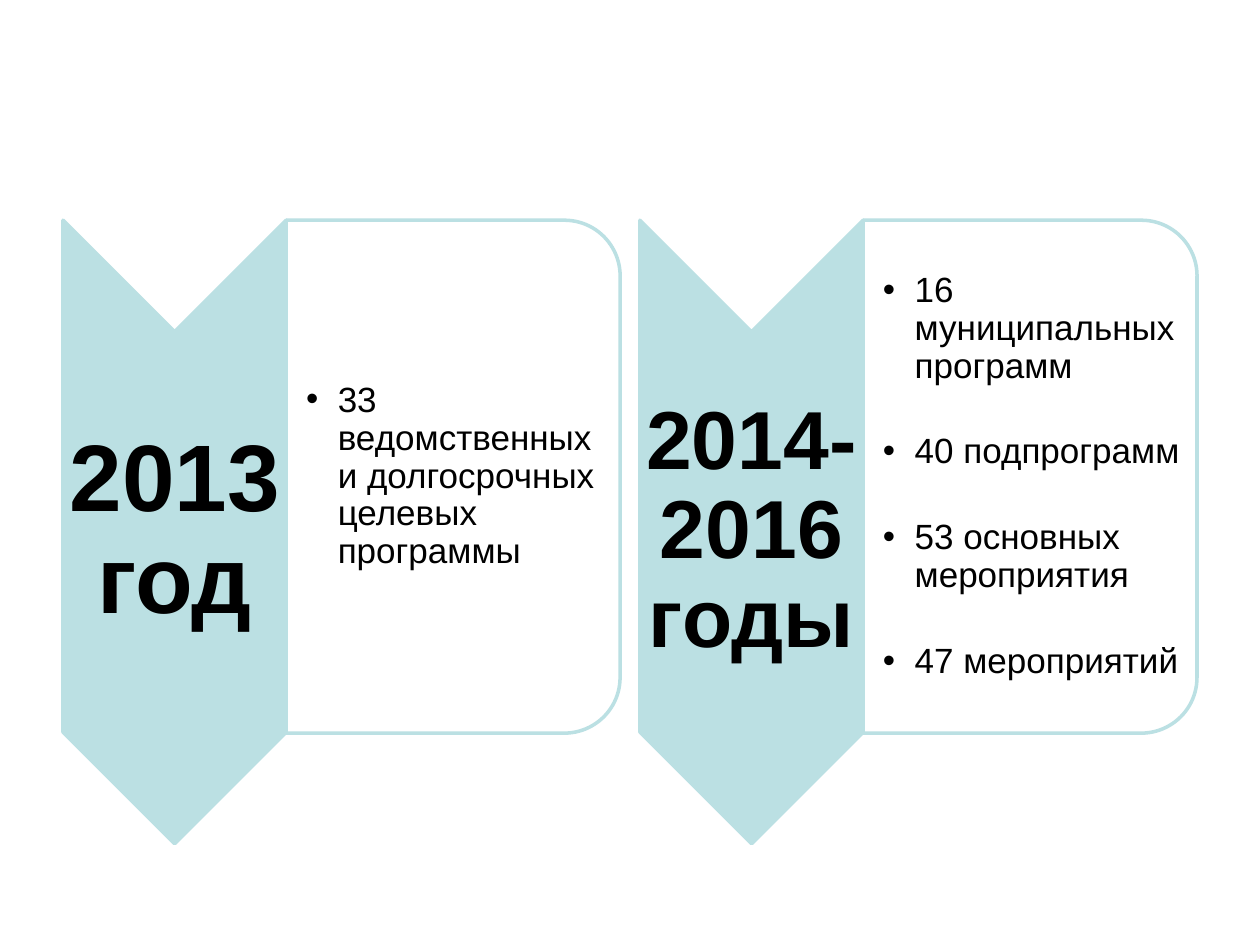
import pptx
import pptx.dml.color
import pptx.enum.shapes
import pptx.enum.text
import pptx.oxml.ns
import pptx.util
from lxml import etree
from pptx.util import Cm

AQUA = pptx.dml.color.RGBColor(0xBB, 0xE0, 0xE3)
WHITE = pptx.dml.color.RGBColor(0xFF, 0xFF, 0xFF)
BLACK = pptx.dml.color.RGBColor(0x00, 0x00, 0x00)
FONT = "Arial"
ITEM_SIZE = 20
ITEM_GAP = 27.5

PANEL_LEFT, PANEL_TOP, PANEL_PITCH = 1.27, 4.44, 11.63
CHEVRON_WIDTH, CHEVRON_HEIGHT = 4.5, 12.57
BOX_WIDTH, BOX_HEIGHT = 6.73, 10.34

PERIODS = [
    ("2013 год", 54, 0.1, ["33 ведомственных и долгосрочных целевых программы"]),
    ("2014-2016 годы", 47, 0.08, [
        "16 муниципальных программ",
        "40 подпрограмм",
        "53 основных мероприятия",
        "47 мероприятий",
    ]),
]


def add_turned_shape(group, kind, left, top, width, height, color):
    """Add a shape turned clockwise by 90°; the frame is the one seen after turning."""
    shape = group.shapes.add_shape(
        kind, Cm(left + (width - height) / 2), Cm(top + (height - width) / 2),
        Cm(height), Cm(width))
    shape.rotation = 90
    shape.shadow.inherit = False
    shape.fill.solid()
    shape.fill.fore_color.rgb = color
    shape.line.color.rgb = AQUA
    shape.line.width = pptx.util.Pt(2)
    return shape


def set_opacity(shape, percent):
    color = shape.fill._xPr.find(".//" + pptx.oxml.ns.qn("a:srgbClr"))
    etree.SubElement(color, pptx.oxml.ns.qn("a:alpha"), val=str(percent * 1000))


def add_text_frame(group, left, top, width, height, margins):
    """Add a wrapped text box; margins are left, top, right and bottom in cm."""
    frame = group.shapes.add_textbox(Cm(left), Cm(top), Cm(width), Cm(height)).text_frame
    frame.word_wrap = True
    frame.vertical_anchor = pptx.enum.text.MSO_ANCHOR.MIDDLE
    (frame.margin_left, frame.margin_top,
     frame.margin_right, frame.margin_bottom) = map(Cm, margins)
    return frame


def write_paragraph(paragraph, text, size, bold=False):
    paragraph.line_spacing = 0.9
    run = paragraph.add_run()
    run.text = text
    run.font.name = FONT
    run.font.size = pptx.util.Pt(size)
    run.font.bold = bold
    run.font.color.rgb = BLACK


def add_bullet(paragraph):
    properties = paragraph._p.get_or_add_pPr()
    properties.set("marL", str(Cm(0.64)))
    properties.set("indent", str(-Cm(0.64)))
    etree.SubElement(properties, pptx.oxml.ns.qn("a:buFont"), typeface=FONT)
    etree.SubElement(properties, pptx.oxml.ns.qn("a:buChar"), char="•")


def add_chevron(group, left, heading, size, margin):
    add_turned_shape(group, pptx.enum.shapes.MSO_SHAPE.CHEVRON,
                     left, PANEL_TOP, CHEVRON_WIDTH, CHEVRON_HEIGHT, AQUA)
    frame = add_text_frame(group, left, PANEL_TOP + CHEVRON_WIDTH / 2,
                           CHEVRON_WIDTH, CHEVRON_HEIGHT - CHEVRON_WIDTH, [margin] * 4)
    paragraph = frame.paragraphs[0]
    paragraph.alignment = pptx.enum.text.PP_ALIGN.CENTER
    write_paragraph(paragraph, heading, size, bold=True)


def add_item_box(group, left, items):
    box = add_turned_shape(group, pptx.enum.shapes.MSO_SHAPE.ROUND_2_SAME_RECTANGLE,
                           left, PANEL_TOP, BOX_WIDTH, BOX_HEIGHT, WHITE)
    set_opacity(box, 90)
    inset = 0.33
    frame = add_text_frame(group, left, PANEL_TOP + inset, BOX_WIDTH - inset,
                           BOX_HEIGHT - 2 * inset, (0.4, 0.03, 0, 0.03))
    for index, item in enumerate(items):
        paragraph = frame.add_paragraph() if index else frame.paragraphs[0]
        if index:
            paragraph.space_before = pptx.util.Pt(ITEM_GAP)
        write_paragraph(paragraph, item, ITEM_SIZE)
        add_bullet(paragraph)


def main():
    presentation = pptx.Presentation()
    presentation.slide_width = Cm(25.4)
    presentation.slide_height = Cm(19.05)
    slide = presentation.slides.add_slide(presentation.slide_layouts[6])
    for index, (heading, size, margin, items) in enumerate(PERIODS):
        left = PANEL_LEFT + index * PANEL_PITCH
        group = slide.shapes.add_group_shape()
        add_chevron(group, left, heading, size, margin)
        add_item_box(group, left + CHEVRON_WIDTH, items)
    presentation.save("out.pptx")


if __name__ == "__main__":
    main()
